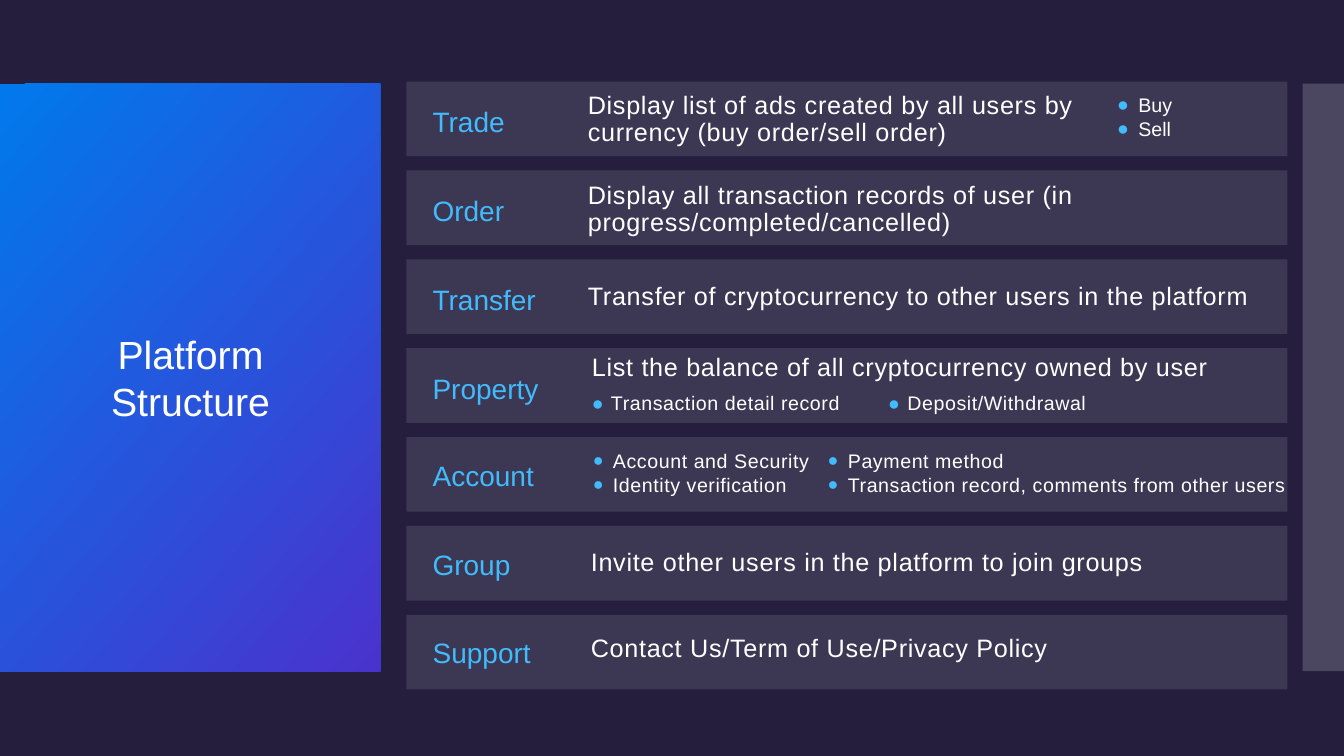
import pptx
import pptx.dml.color
import pptx.enum.shapes
import pptx.enum.text
import pptx.oxml
import pptx.oxml.ns
import pptx.util

Inches = pptx.util.Inches
Pt = pptx.util.Pt
RGBColor = pptx.dml.color.RGBColor

# Content
TITLE = "Platform Structure"

# Row name, label width, label offset from the top of the row
ROWS = [
    ("Trade", 0.83, 0.18),
    ("Order", 0.82, 0.18),
    ("Transfer", 1.14, 0.18),
    ("Property", 1.16, 0.18),
    ("Account", 1.12, 0.16),
    ("Group", 0.89, 0.16),
    ("Support", 1.09, 0.16),
]

# Text, (left, top, width, height), wrap
DESCRIPTIONS = [
    ("Display list of ads created by all users by currency (buy order/sell order)",
     (5.78, 0.87, 5.91, 0.65), True),
    ("Display all transaction records of user (in progress/completed/cancelled)",
     (5.78, 1.76, 6.99, 0.65), True),
    ("Transfer of cryptocurrency to other users in the platform",
     (5.78, 2.77, 6.99, 0.38), True),
    ("List the balance of all cryptocurrency owned by user",
     (5.82, 3.47, 6.25, 0.38), False),
    ("Invite other users in the platform to join groups",
     (5.81, 5.4, 5.62, 0.38), False),
    ("Contact Us/Term of Use/Privacy Policy",
     (5.81, 6.26, 4.67, 0.38), False),
]

# Items, (left, top, width, height), wrap, left margin, hanging, spacing, bullet size %
BULLET_LISTS = [
    (["Buy", "Sell"], (10.89, 0.9, 1.33, 0.54), True, 0.35, 0.21, 0, 100),
    (["Transaction detail record"],
     (5.82, 3.86, 2.83, 0.32), True, 0.19, 0.19, 0.4, 100),
    (["Deposit/Withdrawal"],
     (8.76, 3.86, 2.83, 0.32), True, 0.19, 0.19, 0.4, 100),
    (["Account and Security", "Identity verification"],
     (5.83, 4.43, 2.27, 0.54), False, 0.2, 0.2, 0.4, 91),
    (["Payment method", "Transaction record, comments from other users"],
     (8.16, 4.43, 4.66, 0.54), False, 0.2, 0.2, 0.4, 91),
]

# Layout and colours
ROW_LEFT, ROW_WIDTH, ROW_HEIGHT = 4.03, 8.74, 0.74
FIRST_ROW_TOP, LAST_ROW_TOP = 0.81, 6.1
ROW_PITCH = (LAST_ROW_TOP - FIRST_ROW_TOP) / (len(ROWS) - 1)
LABEL_LEFT, LABEL_HEIGHT = 4.24, 0.41
PANEL_TOP, PANEL_HEIGHT = 0.83, 5.83

BACKGROUND = RGBColor(0x25, 0x1F, 0x3D)
ROW_FILL = RGBColor(0x3C, 0x38, 0x53)
STRIP_FILL = RGBColor(0x4B, 0x47, 0x60)
BLUE = RGBColor(0x01, 0x79, 0xEC)
PURPLE = RGBColor(0x49, 0x33, 0xCD)
ACCENT = RGBColor(0x42, 0xBB, 0xFD)
WHITE = RGBColor(0xFF, 0xFF, 0xFF)


def add_box(slide, box, color=None):
    shape = slide.shapes.add_shape(
        pptx.enum.shapes.MSO_SHAPE.RECTANGLE, *map(Inches, box))
    shape.shadow.inherit = False
    shape.line.fill.background()
    if color is not None:
        shape.fill.solid()
        shape.fill.fore_color.rgb = color
    return shape


def set_margins(text_frame, margin):
    text_frame.margin_left = text_frame.margin_right = Inches(margin)
    text_frame.margin_top = text_frame.margin_bottom = Inches(margin)


def format_runs(paragraph, size, color, spacing=0):
    for run in paragraph.runs:
        run.font.name = "Arial"
        run.font.size = Pt(size)
        run.font.color.rgb = color
        if spacing:
            run.font._element.set("spc", str(round(spacing * 100)))


def add_text(slide, lines, box, size, color, wrap, spacing=0, line_spacing=1.0):
    text_frame = slide.shapes.add_textbox(*map(Inches, box)).text_frame
    set_margins(text_frame, 0.05)
    text_frame.word_wrap = wrap
    text_frame.auto_size = pptx.enum.text.MSO_AUTO_SIZE.SHAPE_TO_FIT_TEXT
    text_frame.text = "\n".join(lines)
    for paragraph in text_frame.paragraphs:
        paragraph.line_spacing = line_spacing
        format_runs(paragraph, size, color, spacing)
    return text_frame


def add_bullet(paragraph, margin, hanging, percent):
    paragraph.level = 1
    paragraph.space_before = Pt(2)
    properties = paragraph._p.get_or_add_pPr()
    properties.set("marL", str(Inches(margin)))
    properties.set("indent", str(-Inches(hanging)))
    namespace = pptx.oxml.ns.nsdecls("a")
    for xml in (
        f'<a:buClr {namespace}><a:srgbClr val="{ACCENT}"/></a:buClr>',
        f'<a:buSzPct {namespace} val="{percent * 1000}"/>',
        f'<a:buFont {namespace} typeface="Arial"/>',
        f'<a:buChar {namespace} char="●"/>',
    ):
        properties.append(pptx.oxml.parse_xml(xml))


def main():
    presentation = pptx.Presentation()
    presentation.slide_width = Inches(13.33)
    presentation.slide_height = Inches(7.5)
    slide = presentation.slides.add_slide(presentation.slide_layouts[5])
    slide.background.fill.solid()
    slide.background.fill.fore_color.rgb = BACKGROUND

    # Side panels
    panel = add_box(slide, (0, PANEL_TOP, 3.77, PANEL_HEIGHT))
    panel.fill.gradient()
    panel.fill.gradient_angle = 360 - 41
    for stop, color, position in zip(panel.fill.gradient_stops, (BLUE, PURPLE), (0, 1)):
        stop.color.rgb = color
        stop.position = position
    add_box(slide, (12.92, PANEL_TOP, 0.41, PANEL_HEIGHT), STRIP_FILL)

    # Title, brought in front of the panel
    title = slide.shapes.title
    title.left, title.top = Inches(0.28), Inches(1.23)
    title.width, title.height = Inches(3.22), Inches(5.03)
    title.element.getparent().append(title.element)
    text_frame = title.text_frame
    text_frame.text = TITLE
    text_frame.word_wrap = True
    set_margins(text_frame, 0.1)
    text_frame.vertical_anchor = pptx.enum.text.MSO_ANCHOR.MIDDLE
    text_frame.paragraphs[0].alignment = pptx.enum.text.PP_ALIGN.CENTER
    format_runs(text_frame.paragraphs[0], 28, WHITE)

    # Rows with labels
    for index, (name, width, offset) in enumerate(ROWS):
        top = FIRST_ROW_TOP + index * ROW_PITCH
        add_box(slide, (ROW_LEFT, top, ROW_WIDTH, ROW_HEIGHT), ROW_FILL)
        add_text(slide, [name], (LABEL_LEFT, top + offset, width, LABEL_HEIGHT),
                 20, ACCENT, False)

    # Descriptions
    for text, box, wrap in DESCRIPTIONS:
        add_text(slide, [text], box, 18, WHITE, wrap, 0.5, 0.9)

    # Bullet lists
    for items, box, wrap, margin, hanging, spacing, percent in BULLET_LISTS:
        text_frame = add_text(slide, items, box, 14, WHITE, wrap, spacing, 0.9)
        for paragraph in text_frame.paragraphs:
            add_bullet(paragraph, margin, hanging, percent)

    presentation.save("out.pptx")


if __name__ == "__main__":
    main()
